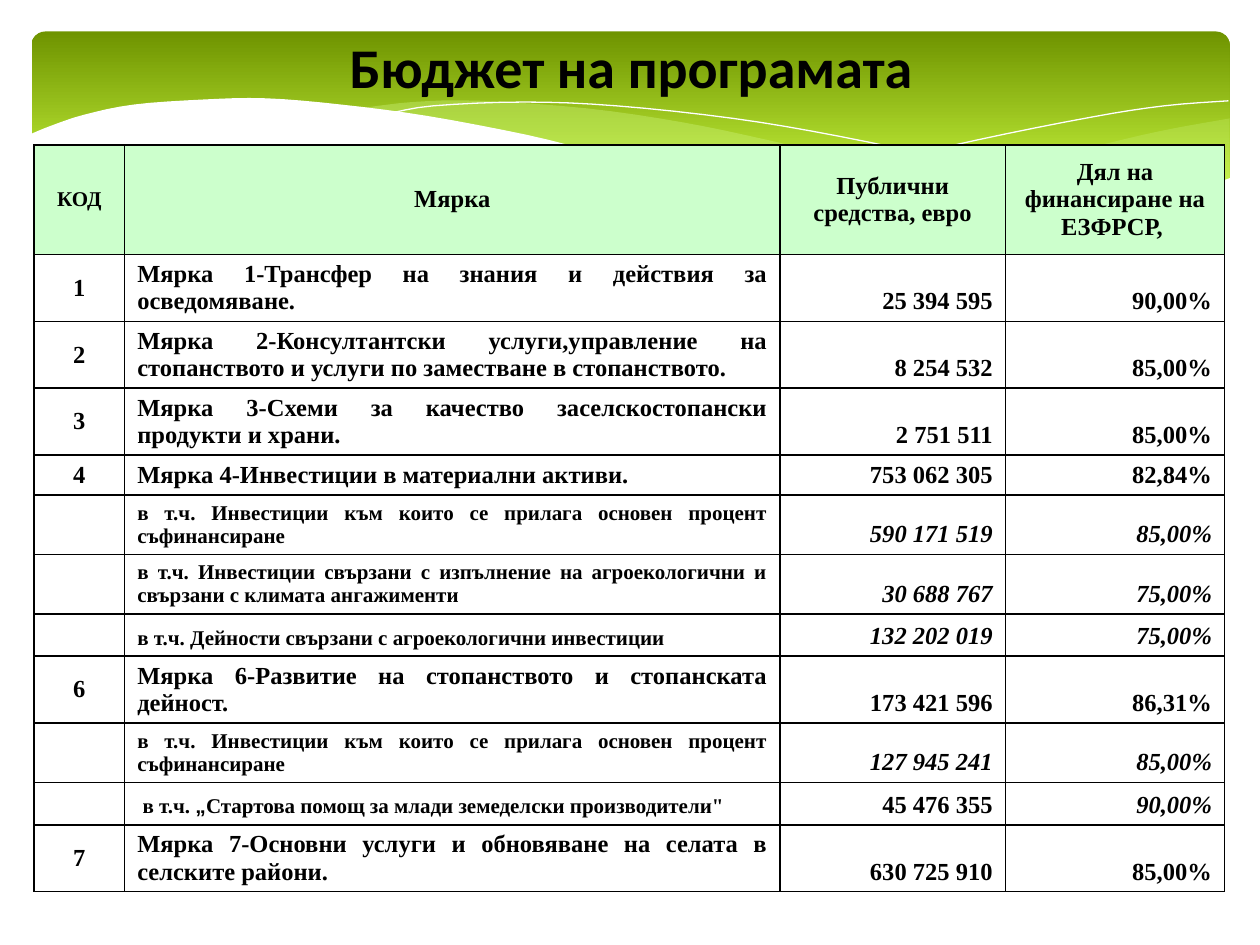
from dataclasses import dataclass

import lxml.etree
import pptx
import pptx.dml.color
import pptx.enum.shapes
import pptx.enum.text
import pptx.oxml.ns
import pptx.util
from pptx.util import Inches, Pt

ALIGN = pptx.enum.text.PP_ALIGN
ANCHOR = pptx.enum.text.MSO_ANCHOR
qn = pptx.oxml.ns.qn
Point = tuple[float, float]

BLACK, WHITE, HEADER_GREEN, PALE_GREEN = "000000", "FFFFFF", "CCFFCC", "CAF278"
TABLE_FONT = "Times New Roman"


@dataclass
class Wave:
    edges: list[list[Point]]  # each edge is a smooth curve; edges meet at corners
    fill: str | None = None
    opacity: int = 100
    line: str | None = None


@dataclass
class Measure:
    code: str
    name: str
    amount: str
    share: str
    height: float
    amount_italic: bool = False
    share_italic: bool = False


WAVES = [
    Wave([[(9.76, 0.94), (9.21, 1.04), (8.61, 1.18), (7.79, 1.37), (6.61, 1.6)],
          [(6.61, 1.6), (7.18, 1.67), (7.69, 1.71), (8.14, 1.72), (8.63, 1.7),
           (9.13, 1.62), (9.49, 1.52), (9.76, 1.41)]], PALE_GREEN, 29),
    Wave([[(8.93, 1.67), (8.07, 1.54), (7.06, 1.34), (6.13, 1.12), (5.41, 0.97),
           (4.65, 0.86), (3.8, 0.8), (3.28, 0.81), (2.86, 0.86)],
          [(2.86, 0.86), (3.62, 0.97), (4.49, 1.16), (5.66, 1.43), (6.5, 1.58),
           (7.22, 1.68), (7.85, 1.72), (8.38, 1.72), (8.93, 1.67)]], PALE_GREEN, 40),
    Wave([[(3.09, 0.9), (3.44, 0.84), (4.16, 0.81), (4.89, 0.84), (5.82, 0.94),
           (6.65, 1.08), (7.6, 1.28), (8.31, 1.45), (9.07, 1.66)]], line=WHITE),
    Wave([[(6.13, 1.51), (6.95, 1.3), (7.76, 1.11), (8.66, 0.93), (9.24, 0.84),
           (9.75, 0.8)]], line=WHITE),
    Wave([[(9.77, 1.41), (9.4, 1.54), (8.99, 1.64), (8.5, 1.7), (7.93, 1.71),
           (7.26, 1.67), (6.47, 1.56), (5.55, 1.39), (4.75, 1.21), (4.18, 1.07),
           (3.39, 0.92), (2.71, 0.83), (2.11, 0.78), (1.61, 0.79), (1.06, 0.83),
           (0.67, 0.91), (0.4, 1.0), (0.23, 1.07)],
          [(0.23, 2.24), (9.77, 2.24)]], WHITE),
]

# Row heights by text: two large lines, two small lines, one line
TALL, MEDIUM, SHORT = 0.53, 0.47, 0.32
HEADER_HEIGHT = 0.87
COLUMN_WIDTHS = [0.72, 5.2, 1.79, 1.74]
HEADERS = ["КОД", "Мярка", "Публични средства, евро", "Дял на финансиране на ЕЗФРСР, "]
BASE_RATE = "в т.ч. Инвестиции към които се прилага основен процент съфинансиране"
MEASURES = [
    Measure("1", "Мярка 1-Трансфер на знания и действия за осведомяване.",
            "25 394 595", "90,00%", TALL),
    Measure("2", "Мярка 2-Консултантски услуги,управление на стопанството и услуги "
            "по заместване в стопанството.", "8 254 532", "85,00%", TALL),
    Measure("3", "Мярка 3-Схеми за качество заселскостопански продукти и храни.",
            "2 751 511", "85,00%", TALL),
    Measure("4", "Мярка 4-Инвестиции в материални активи.",
            "753 062 305", "82,84%", SHORT),
    Measure("", BASE_RATE, "590 171 519", "85,00%", MEDIUM, True, True),
    Measure("", "в т.ч. Инвестиции свързани с изпълнение на агроекологични и "
            "свързани с климата ангажименти", "30 688 767", "75,00%", MEDIUM, True, True),
    Measure("", "в т.ч. Дейности свързани с агроекологични инвестиции",
            "132 202 019", "75,00%", SHORT, True, True),
    Measure("6", "Мярка 6-Развитие на стопанството и стопанската дейност.",
            "173 421 596", "86,31%", TALL),
    Measure("", BASE_RATE, "127 945 241", "85,00%", MEDIUM, True, True),
    Measure("", " в т.ч. „Стартова помощ за млади земеделски производители\"",
            "45 476 355", "90,00%", SHORT, False, True),
    Measure("7", "Мярка 7-Основни услуги и обновяване на селата в селските райони.",
            "630 725 910", "85,00%", TALL),
]


def color(value: str) -> pptx.dml.color.RGBColor:
    return pptx.dml.color.RGBColor.from_string(value)


def smooth(points: list[Point], steps: int = 4) -> list[Point]:
    """Catmull-Rom curve through the points."""
    padded = [points[0], *points, points[-1]]
    curve = [points[0]]
    for a, b, c, d in zip(padded, padded[1:], padded[2:], padded[3:]):
        for t in (step / steps for step in range(1, steps + 1)):
            curve.append(tuple(
                (2 * q + (r - p) * t + (2 * p - 5 * q + 4 * r - s) * t ** 2
                 + (3 * q - p - 3 * r + s) * t ** 3) / 2
                for p, q, r, s in zip(a, b, c, d)))
    return curve


def draw_banner(slide) -> None:
    shape = slide.shapes.add_shape(
        pptx.enum.shapes.MSO_SHAPE.ROUNDED_RECTANGLE,
        Inches(0.25), Inches(0.25), Inches(9.51), Inches(1.56))
    shape.adjustments[0] = 0.07
    shape.shadow.inherit = False
    shape.line.fill.background()
    shape.fill.gradient()
    shape.fill.gradient_angle = 270
    for stop, value, position in zip(shape.fill.gradient_stops, ("6F9400", "D0FF44"), (0, 0.9)):
        stop.color.rgb = color(value)
        stop.position = position


def draw_wave(slide, wave: Wave) -> None:
    points = [(Inches(x), Inches(y)) for edge in wave.edges for x, y in smooth(edge)]
    builder = slide.shapes.build_freeform(*points[0])
    builder.add_line_segments(points[1:], close=wave.fill is not None)
    shape = builder.convert_to_shape()
    shape.shadow.inherit = False
    if wave.fill:
        shape.fill.solid()
        shape.fill.fore_color.rgb = color(wave.fill)
        fill_color = shape.fill._xPr.find(qn("a:solidFill"))[0]
        if wave.opacity < 100:
            lxml.etree.SubElement(fill_color, qn("a:alpha"), val=str(wave.opacity * 1000))
    else:
        shape.fill.background()
    if wave.line:
        shape.line.color.rgb = color(wave.line)
        shape.line.width = Pt(0)
    else:
        shape.line.fill.background()


def format_run(run, size: float, font: str, italic: bool = False) -> None:
    run.font.size, run.font.name = Pt(size), font
    run.font.bold, run.font.italic = True, italic
    run.font.color.rgb = color(BLACK)


def fill_cell(cell, text: str, size: float, align, anchor,
              italic: bool = False, background: str | None = None) -> None:
    cell.vertical_anchor = anchor
    paragraph = cell.text_frame.paragraphs[0]
    paragraph.alignment = align
    # The opening quotation mark is set in its own font
    for piece in filter(None, text.partition("„")):
        run = paragraph.add_run()
        run.text = piece
        format_run(run, size, "Arial" if piece == "„" else TABLE_FONT, italic)
    if not text:
        lxml.etree.SubElement(paragraph._p, qn("a:endParaRPr"), sz=str(size * 100))
    properties = cell._tc.get_or_add_tcPr()
    for side in ("lnL", "lnR", "lnT", "lnB"):
        border = lxml.etree.SubElement(properties, qn(f"a:{side}"), w=str(Pt(1)))
        solid = lxml.etree.SubElement(border, qn("a:solidFill"))
        lxml.etree.SubElement(solid, qn("a:srgbClr"), val=BLACK)
    if background:
        cell.fill.solid()
        cell.fill.fore_color.rgb = color(background)
    else:
        cell.fill.background()


def draw_table(slide) -> None:
    heights = [HEADER_HEIGHT] + [measure.height for measure in MEASURES]
    table = slide.shapes.add_table(
        len(heights), len(HEADERS), Inches(0.27), Inches(1.15),
        Inches(sum(COLUMN_WIDTHS)), Inches(sum(heights))).table
    table.first_row = table.horz_banding = False
    for column, width in zip(table.columns, COLUMN_WIDTHS):
        column.width = Inches(width)
    for row, height in zip(table.rows, heights):
        row.height = Inches(height)
    for index, header in enumerate(HEADERS):
        fill_cell(table.cell(0, index), header, 14 if index else 12,
                  ALIGN.CENTER, ANCHOR.MIDDLE, background=HEADER_GREEN)
    for index, measure in enumerate(MEASURES, start=1):
        code, name, amount, share = table.rows[index].cells
        fill_cell(code, measure.code, 14, ALIGN.CENTER, ANCHOR.MIDDLE)
        fill_cell(name, measure.name, 14 if measure.code else 12, ALIGN.JUSTIFY, ANCHOR.BOTTOM)
        fill_cell(amount, measure.amount, 14, ALIGN.RIGHT, ANCHOR.BOTTOM, measure.amount_italic)
        fill_cell(share, measure.share, 14, ALIGN.RIGHT, ANCHOR.BOTTOM, measure.share_italic)


def place_title(slide, text: str) -> None:
    title = slide.shapes.title
    title.left, title.top, title.width, title.height = map(Inches, (0.51, 0.21, 9, 0.63))
    title.text_frame.text = text
    title.text_frame.vertical_anchor = ANCHOR.MIDDLE
    paragraph = title.text_frame.paragraphs[0]
    paragraph.alignment = ALIGN.CENTER
    format_run(paragraph.runs[0], 32, "Calibri")
    slide.shapes._spTree.append(title._element)  # in front of the waves


def main() -> None:
    presentation = pptx.Presentation()
    presentation.slide_width, presentation.slide_height = Inches(10), Inches(7.5)
    slide = presentation.slides.add_slide(presentation.slide_layouts[5])
    draw_banner(slide)
    for wave in WAVES:
        draw_wave(slide, wave)
    place_title(slide, "Бюджет на програмата")
    draw_table(slide)
    presentation.save("out.pptx")


if __name__ == "__main__":
    main()
